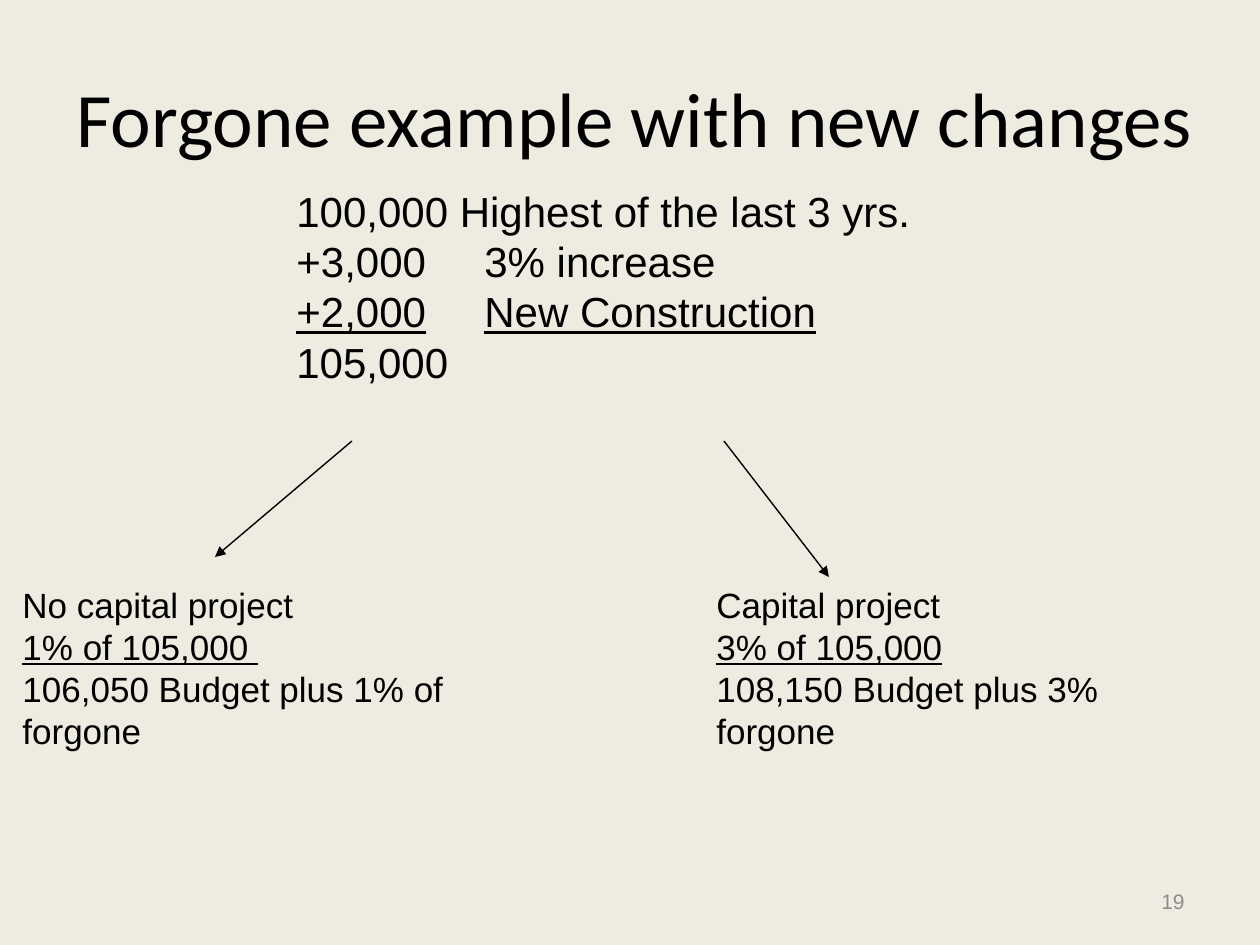
from lxml import etree
from pptx import Presentation, util as u
from pptx.dml.color import RGBColor
from pptx.enum import shapes, text
from pptx.oxml.ns import qn

PX = 914400 / 126
COLORS = {"background": "EEECE1", "ink": "000000", "page": "8C8C8C"}


def px(length):
    return u.Emu(round(length * PX))


def color(name):
    return RGBColor.from_string(COLORS[name])


def add_text(slide, box, lines, size, font="Arial", ink="ink", underlined=None,
             align=text.PP_ALIGN.LEFT, anchor=text.MSO_ANCHOR.TOP):
    frame = slide.shapes.add_textbox(*map(px, box)).text_frame
    frame.word_wrap = True
    frame.vertical_anchor = anchor
    frame.text = "\n".join(lines)
    for index, line in enumerate(frame.paragraphs):
        line.alignment = align
        for run in line.runs:
            run.font.name = font
            run.font.size = u.Pt(size)
            run.font.color.rgb = color(ink)
            run.font.underline = index == underlined
    return frame


def add_title(slide, box):
    frame = add_text(slide, box, ["Forgone example with new changes"], 44, "Calibri",
                     align=text.PP_ALIGN.CENTER, anchor=text.MSO_ANCHOR.MIDDLE)
    frame.margin_left = frame.margin_right = 0


def add_budget(slide, box):
    sums = add_text(slide, box, ["100,000 Highest of the last 3 yrs.", "+3,000\t3% increase",
                                 "+2,000\tNew Construction", "105,000"], 24, underlined=2)
    # Line up the explanations of the two additions
    for line in sums.paragraphs[1:3]:
        stops = etree.SubElement(line._p.get_or_add_pPr(), qn("a:tabLst"))
        etree.SubElement(stops, qn("a:tab"), pos=str(px(188)), algn="l")


def add_outcome(slide, box, lines, arrow):
    add_text(slide, box, lines, 20, underlined=1)
    # Arrow from the budget; its ends are relative to the box
    left, top = box[:2]
    ends = [px(origin + offset) for origin, offset in zip((left, top) * 2, arrow)]
    branch = slide.shapes.add_connector(shapes.MSO_CONNECTOR.STRAIGHT, *ends)
    branch.line.color.rgb = color("ink")
    branch.line.width = u.Pt(0.79)
    etree.SubElement(branch.line._get_or_add_ln(), qn("a:tailEnd"), type="triangle")
    etree.SubElement(branch._element.spPr, qn("a:effectLst"))


def add_page_number(slide, box):
    add_text(slide, box, ["19"], 12, ink="page",
             align=text.PP_ALIGN.RIGHT, anchor=text.MSO_ANCHOR.MIDDLE)


def main():
    deck = Presentation()
    deck.slide_width, deck.slide_height = px(1260), px(945)
    slide = deck.slides.add_slide(deck.slide_layouts[6])
    slide.background.fill.solid()
    slide.background.fill.fore_color.rgb = color("background")

    add_title(slide, (63, 38, 1144, 157))
    add_budget(slide, (284, 179, 651, 254))
    add_outcome(slide, (10, 577, 546, 183),
                ["No capital project", "1% of 105,000 ", "106,050 Budget plus 1% of forgone"],
                (342, -136, 205, -20))
    add_outcome(slide, (704, 577, 504, 183),
                ["Capital project", "3% of 105,000", "108,150 Budget plus 3% forgone"],
                (20, -136, 125, 0))
    add_page_number(slide, (903, 876, 294, 50))
    deck.save("out.pptx")


if __name__ == "__main__":
    main()
